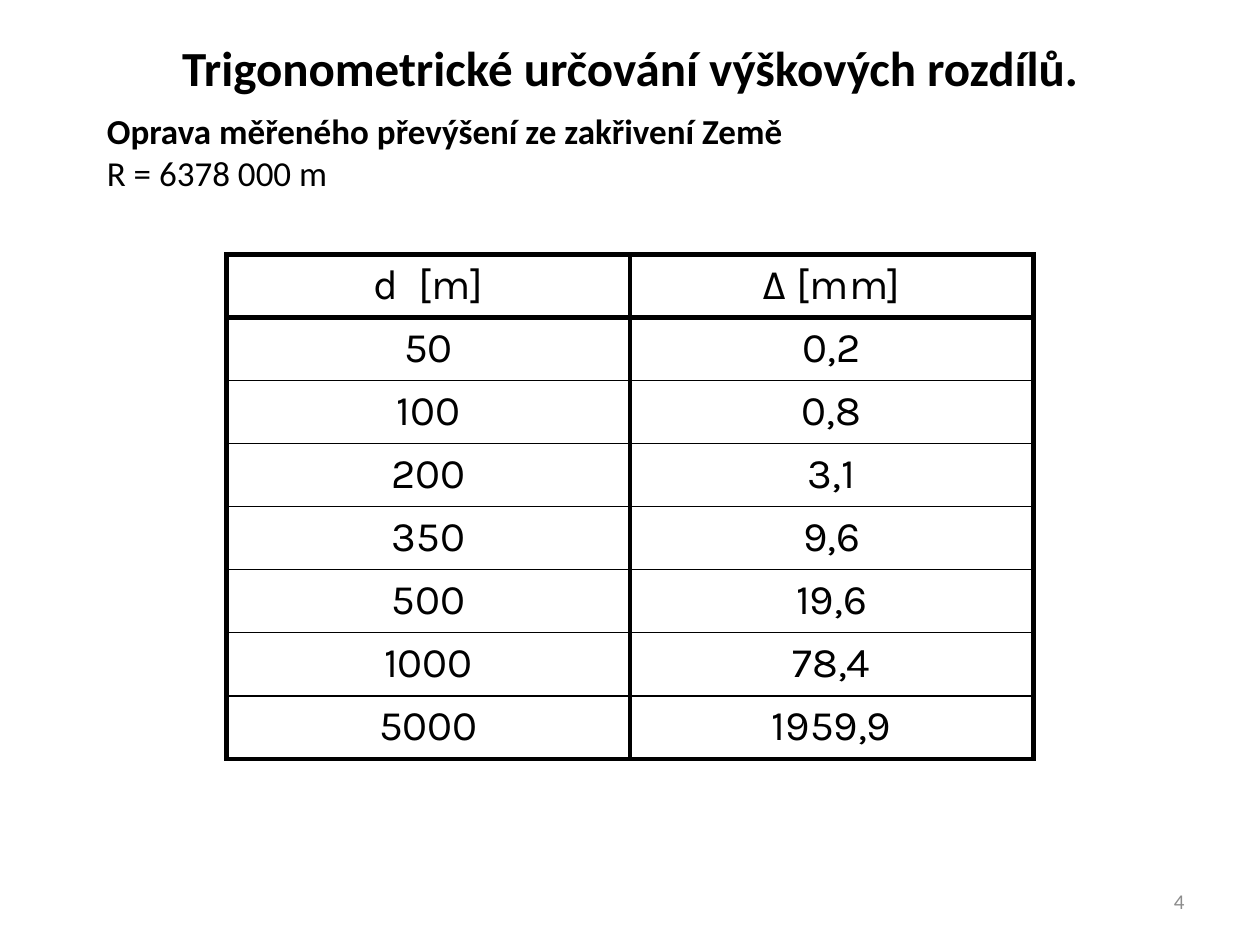
from dataclasses import dataclass

from lxml import etree
from pptx import Presentation
from pptx.dml.color import RGBColor
from pptx.enum.text import MSO_ANCHOR, PP_ALIGN
from pptx.oxml.ns import qn
from pptx.util import Pt

LEFT, CENTER, RIGHT = PP_ALIGN.LEFT, PP_ALIGN.CENTER, PP_ALIGN.RIGHT
TOP, MIDDLE = MSO_ANCHOR.TOP, MSO_ANCHOR.MIDDLE

COLORS = {"ink": "000000", "page_number": "8C8C8C"}
BODY_FONT = "Calibri"
TABLE_FONT = "Karla"
THICK, THIN = 3, 0.75
COLUMN_WIDTH, ROW_HEIGHT = 230.4, 36

CORRECTIONS = [
    ("d  [m]", "Δ [mm]"),
    ("50", "0,2"),
    ("100", "0,8"),
    ("200", "3,1"),
    ("350", "9,6"),
    ("500", "19,6"),
    ("1000", "78,4"),
    ("5000", "1959,9"),
]


@dataclass
class Line:
    text: str
    size: float
    bold: bool = False
    color: str = "ink"
    align: PP_ALIGN = LEFT
    font: str = BODY_FONT


@dataclass
class TextBlock:
    left: float
    top: float
    width: float
    height: float
    lines: list[Line]
    anchor: MSO_ANCHOR = TOP


TEXT_BLOCKS = [
    TextBlock(516, 500.5, 168, 28.75,
              [Line("4", 12, color="page_number", align=RIGHT)], MIDDLE),
    TextBlock(54, 59, 625.5, 55.75, [
        Line("Oprava měřeného převýšení ze zakřivení Země", 20, bold=True),
        Line("R = 6378 000 m", 20),
    ]),
    TextBlock(54, 18, 612, 41.25, [
        Line("Trigonometrické určování výškových rozdílů.", 28, bold=True, align=CENTER),
    ]),
]


def write_line(paragraph, line: Line) -> None:
    paragraph.text = line.text
    paragraph.alignment = line.align
    for run in paragraph.runs:
        run.font.name = line.font
        run.font.size = Pt(line.size)
        run.font.bold = line.bold
        run.font.color.rgb = RGBColor.from_string(COLORS[line.color])


def draw_text_block(slide, block: TextBlock) -> None:
    frame = slide.shapes.add_textbox(
        Pt(block.left), Pt(block.top), Pt(block.width), Pt(block.height)
    ).text_frame
    frame.word_wrap = True
    frame.vertical_anchor = block.anchor
    for index, line in enumerate(block.lines):
        paragraph = frame.add_paragraph() if index else frame.paragraphs[0]
        write_line(paragraph, line)


def set_borders(cell, top: float, bottom: float) -> None:
    properties = cell._tc.get_or_add_tcPr()
    widths = {"a:lnL": THICK, "a:lnR": THICK, "a:lnT": top, "a:lnB": bottom}
    for position, (side, width) in enumerate(widths.items()):
        border = etree.Element(qn(side), w=str(Pt(width)))
        fill = etree.SubElement(border, qn("a:solidFill"))
        etree.SubElement(fill, qn("a:srgbClr"), val=COLORS["ink"])
        properties.insert(position, border)


def draw_corrections(slide, left: float, top: float) -> None:
    row_count, column_count = len(CORRECTIONS), len(CORRECTIONS[0])
    table = slide.shapes.add_table(
        row_count, column_count, Pt(left), Pt(top),
        Pt(COLUMN_WIDTH * column_count), Pt(ROW_HEIGHT * row_count),
    ).table
    table.first_row = False
    table.horz_banding = False
    for row_index, values in enumerate(CORRECTIONS):
        top_border = THICK if row_index <= 1 else THIN
        bottom_border = THICK if row_index in (0, row_count - 1) else THIN
        for column_index, value in enumerate(values):
            cell = table.cell(row_index, column_index)
            cell.fill.background()
            write_line(cell.text_frame.paragraphs[0],
                       Line(value, 24, align=CENTER, font=TABLE_FONT))
            set_borders(cell, top_border, bottom_border)


def main() -> None:
    presentation = Presentation()
    presentation.slide_width = Pt(720)
    presentation.slide_height = Pt(540)
    slide = presentation.slides.add_slide(presentation.slide_layouts[6])
    for block in TEXT_BLOCKS:
        draw_text_block(slide, block)
    draw_corrections(slide, 129.6, 145.5)
    presentation.save("out.pptx")


if __name__ == "__main__":
    main()
